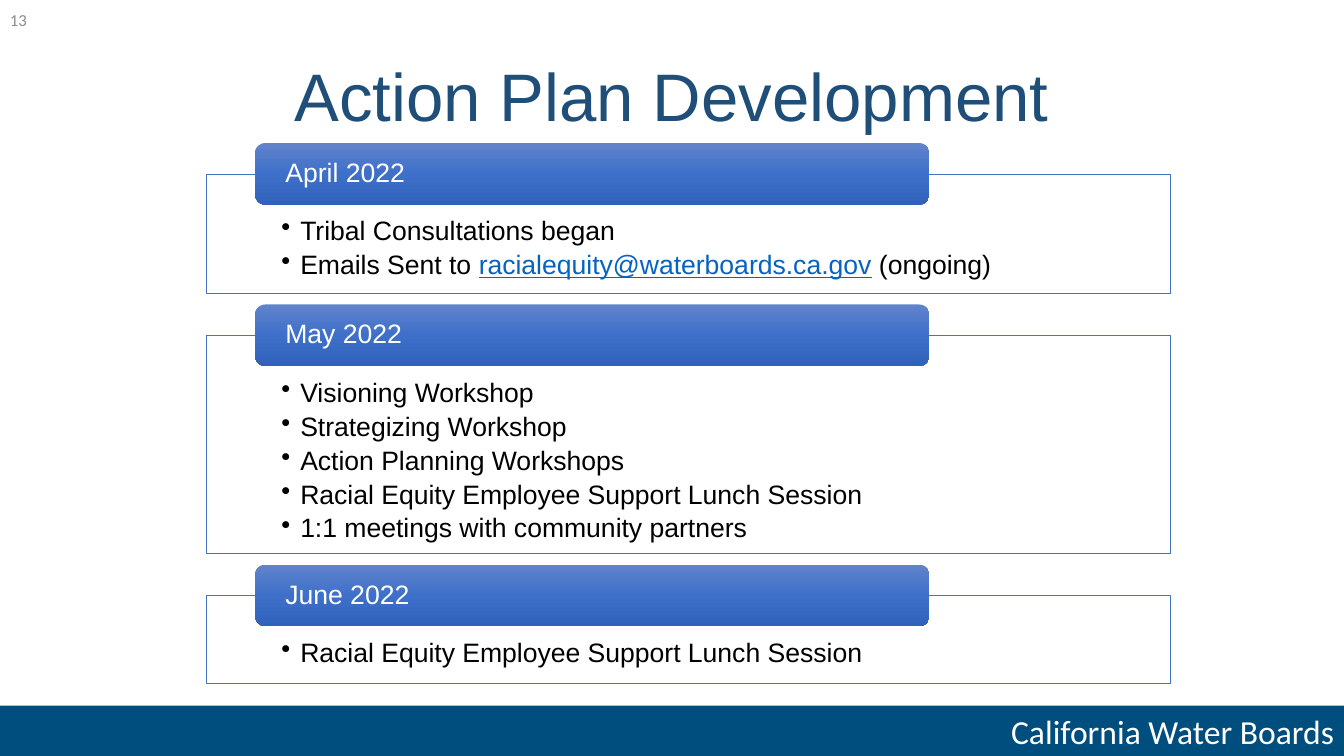
from lxml.etree import SubElement
from copy import deepcopy
from pptx import Presentation
from pptx.dml.color import RGBColor
from pptx.enum.shapes import MSO_SHAPE as Shape
from pptx.enum.text import MSO_ANCHOR as Anchor, PP_ALIGN as Align
from pptx.oxml.ns import qn
from pptx.util import Pt

EMAIL = "racialequity@waterboards.ca.gov"
MONTHS = [
    ("April 2022", ["Tribal Consultations began",
                    f"Emails Sent to {EMAIL} (ongoing)"], 85),
    ("May 2022", ["Visioning Workshop", "Strategizing Workshop",
                  "Action Planning Workshops",
                  "Racial Equity Employee Support Lunch Session",
                  "1:1 meetings with community partners"], 155.5),
    ("June 2022", ["Racial Equity Employee Support Lunch Session"], 62.6),
]
LEFT, WIDTH = 147.6, 688.3          # month frames
TAB_LEFT, TAB_WIDTH, TAB_HEIGHT = 182.2, 481.7, 44
FIRST_TOP, OVERLAP, GAP = 102.2, 22.3, 8


def color(value):
    return RGBColor.from_string(value)


class Deck:
    """Holds the style and the current slide."""
    navy, blue, link = "004E7D", "4472C4", "0563C1"
    title_color, number_color = "1F4E79", "8C8C8C"
    black, white = "000000", "FFFFFF"
    tab_stops = [(0, "6183CB"), (0.5, "3E70CA"), (1, "3062BB")]
    body_size = 19

    def __init__(self, slide):
        self.shapes = slide.shapes

    def shape(self, kind, box):
        shape = self.shapes.add_shape(kind, *map(Pt, box))
        shape.shadow.inherit = False
        shape.line.fill.background()
        return shape

    def fill(self, shape, value):
        shape.fill.solid()
        shape.fill.fore_color.rgb = color(value)

    def insets(self, frame, left, top, right, bottom):
        frame.margin_left, frame.margin_top = Pt(left), Pt(top)
        frame.margin_right, frame.margin_bottom = Pt(right), Pt(bottom)

    def font(self, paragraph, size, value, name="Arial"):
        font = paragraph.font
        font.size, font.name = Pt(size), name
        font.color.rgb = color(value)

    def line(self, frame, text, size, value, name="Arial", align=Align.LEFT):
        """Fills a frame with one vertically centred line."""
        frame.word_wrap = True
        frame.vertical_anchor = Anchor.MIDDLE
        paragraph = frame.paragraphs[0]
        paragraph.text, paragraph.alignment = text, align
        self.font(paragraph, size, value, name)
        return paragraph

    def label(self, box, *style):
        frame = self.shapes.add_textbox(*map(Pt, box)).text_frame
        return self.line(frame, *style)

    def footer(self, box, text):
        band = self.shape(Shape.RECTANGLE, box)
        self.fill(band, self.navy)
        self.line(band.text_frame, text, 24, self.white, "Calibri", Align.RIGHT)

    def bullet(self, paragraph, text):
        properties = paragraph._p.get_or_add_pPr()
        properties.set("marL", str(Pt(13.5)))
        properties.set("indent", str(-Pt(13.5)))
        paragraph.alignment = Align.LEFT
        paragraph.line_spacing, paragraph.space_after = 0.9, Pt(3.75)
        SubElement(properties, qn("a:buChar")).set("char", "•")
        self.font(paragraph, self.body_size, self.black)
        before, address, after = text.partition(EMAIL)
        for part in filter(None, (before, address, after)):
            run = paragraph.add_run()
            run.text = part
            if part == EMAIL:
                run.font.color.rgb = color(self.link)
                run.font.underline = True

    def frame(self, box, items):
        outline = self.shape(Shape.RECTANGLE, box)
        self.fill(outline, self.white)
        solid = outline._element.spPr.find(qn("a:solidFill"))
        SubElement(solid[0], qn("a:alpha")).set("val", "90000")
        outline.line.color.rgb = color(self.blue)
        outline.line.width = Pt(0.5)
        text = outline.text_frame
        text.word_wrap, text.vertical_anchor = True, Anchor.TOP
        self.insets(text, 53.4, 31, 53.4, 10.8)
        for index, item in enumerate(items):
            paragraph = text.add_paragraph() if index else text.paragraphs[0]
            self.bullet(paragraph, item)

    def tab(self, box, month):
        tab = self.shape(Shape.ROUNDED_RECTANGLE, box)
        tab.fill.gradient()
        tab.fill.gradient_angle = 270
        stops = tab._element.spPr.find(qn("a:gradFill")).find(qn("a:gsLst"))
        stops.append(deepcopy(stops[0]))
        for stop, (position, value) in zip(tab.fill.gradient_stops, self.tab_stops):
            stop.position, stop.color.rgb = position, color(value)
        self.insets(tab.text_frame, 19.5, 0, 19.5, 0)
        paragraph = self.line(tab.text_frame, month, self.body_size, self.white)
        paragraph.line_spacing = 0.9


def main():
    presentation = Presentation()
    presentation.slide_width, presentation.slide_height = Pt(960), Pt(540)
    deck = Deck(presentation.slides.add_slide(presentation.slide_layouts[6]))

    # Footer band and page number
    deck.footer((0, 504, 960, 36), "California Water Boards")
    deck.label((0, 0, 216, 28.8), "13", 12, deck.number_color, "Calibri")

    # Months, stacked downwards
    top = FIRST_TOP
    for month, items, height in MONTHS:
        deck.frame((LEFT, top + OVERLAP, WIDTH, height), items)
        deck.tab((TAB_LEFT, top, TAB_WIDTH, TAB_HEIGHT), month)
        top += OVERLAP + height + GAP

    # Title
    title = deck.label((66, 18.8, 828, 104.4), "Action Plan Development", 48,
                       deck.title_color, "Arial", Align.CENTER)
    title.line_spacing = 0.9

    presentation.save("out.pptx")


if __name__ == "__main__":
    main()
